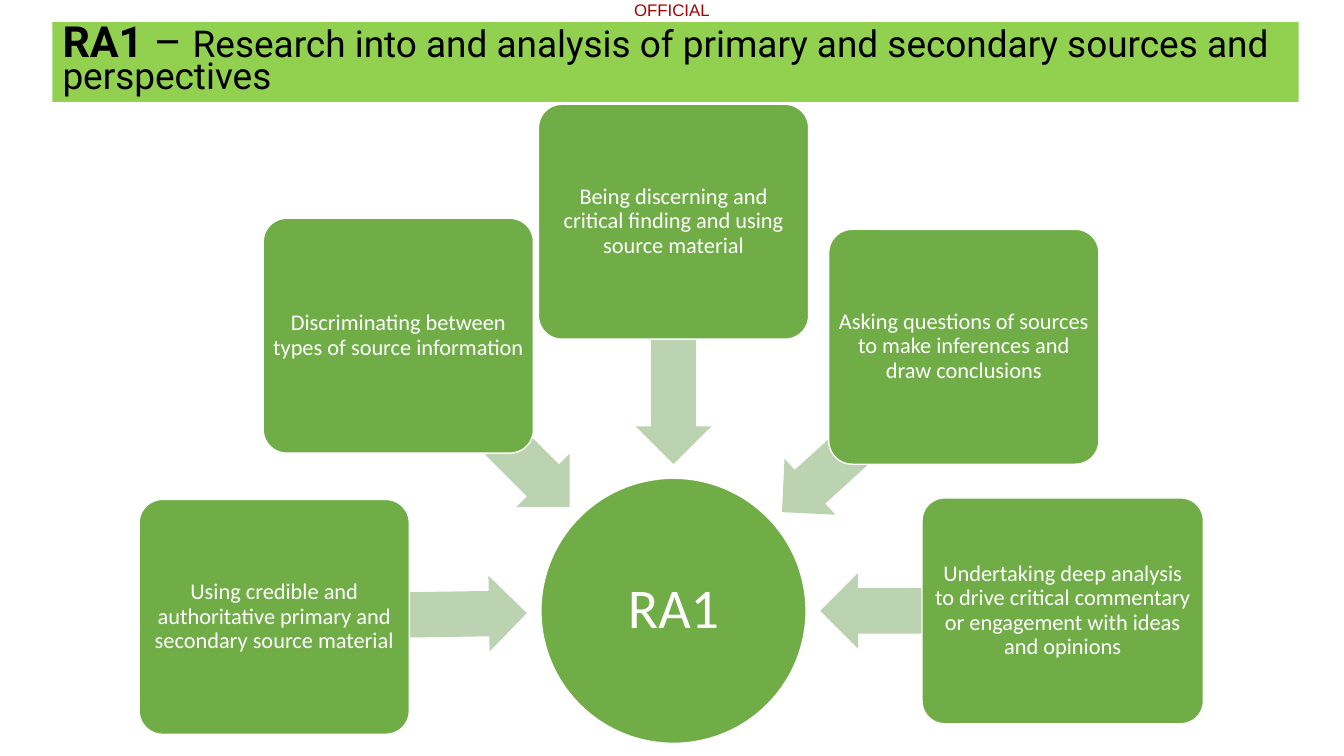
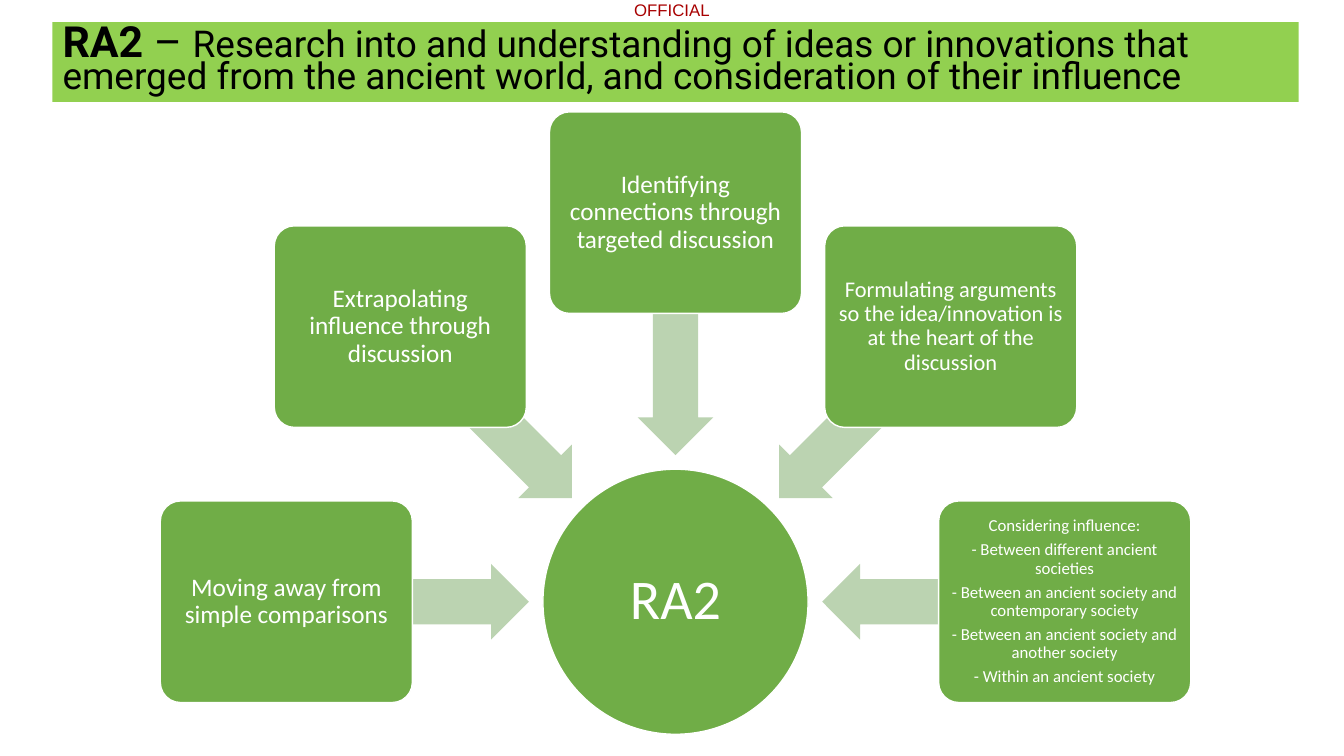
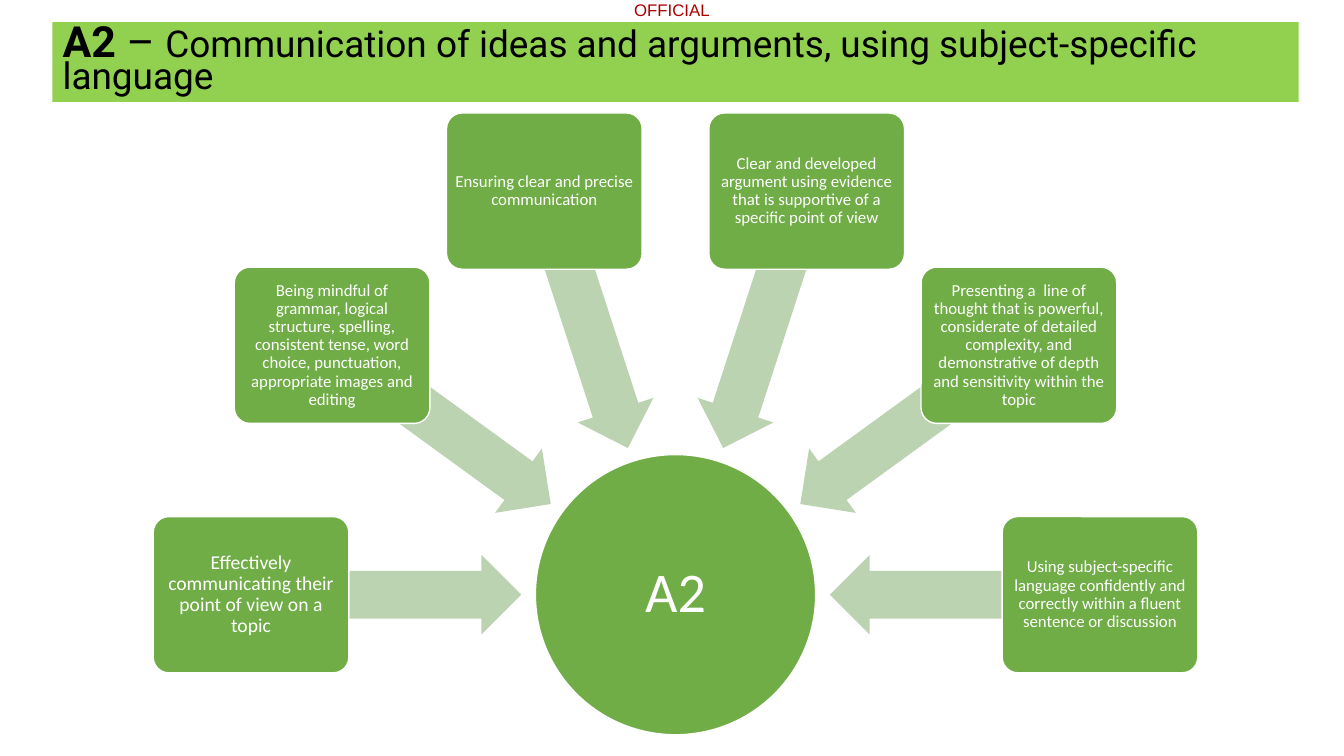
"""Build three hub diagrams that explain assessment criteria."""
from dataclasses import dataclass
from math import atan2, cos, degrees, hypot, radians, sin

from pptx import Presentation
from pptx.dml.color import RGBColor
from pptx.enum.shapes import MSO_SHAPE as Kind
from pptx.enum.text import MSO_ANCHOR as Anchor, MSO_AUTO_SIZE as Fit, PP_ALIGN as Align
from pptx.shapes.autoshape import Shape
from pptx.slide import Slide, SlideLayout
from pptx.text.text import TextFrame, _Paragraph as Para
from pptx.util import Inches, Pt

HUES = {
    "band": "92D050",
    "node": "70AD47",
    "arrow": "BBD3B1",
    "mark": "A80000",
    "dark": "000000",
    "light": "FFFFFF",
}
GAP = 0.14


@dataclass(frozen=True)
class Node:
    text: str
    size: float = 16
    shift: tuple[float, float] = (0, 0)
    dims: tuple[float, float] | None = None


@dataclass(frozen=True)
class Wheel:
    code: str
    title: str
    hub: tuple[float, float]
    width: float
    reach: float
    dims: tuple[float, float]
    thick: float
    nodes: tuple[Node, ...]


WHEELS = (
    Wheel(
        "RA1", "Research into and analysis of primary and secondary sources and perspectives",
        (6.68, 6.06), 2.63, 3.86, (2.68, 2.33), 0.75,
        (
            Node("Using credible and authoritative primary and secondary source material",
                 shift=(-0.1, 0.06)),
            Node("Discriminating between types of source information"),
            Node("Being discerning and critical finding and using source material"),
            Node("Asking questions of sources to make inferences and draw conclusions",
                 shift=(0.15, 0.11)),
            Node("Undertaking deep analysis to drive critical commentary or engagement "
                 "with ideas and opinions", dims=(2.79, 2.24)),
        ),
    ),
    Wheel(
        "RA2", "Research into and understanding of ideas or innovations that emerged "
        "from the ancient world, and consideration of their influence",
        (6.7, 5.97), 2.63, 3.86, (2.5, 2), 0.75,
        (
            Node("Moving away from simple comparisons", 18),
            Node("Extrapolating influence through discussion", 18),
            Node("Identifying connections through targeted discussion", 18),
            Node("Formulating arguments so the idea/innovation is at the heart of the discussion"),
            Node("Considering influence:\n"
                 "- Between different ancient societies\n"
                 "- Between an ancient society and contemporary society\n"
                 "- Between an ancient society and another society\n"
                 "- Within an ancient society", 12),
        ),
    ),
    Wheel(
        "A2", "Communication of ideas and arguments, using subject-specific language",
        (6.7, 5.9), 2.78, 4.21, (1.94, 1.55), 0.79,
        (
            Node("Effectively communicating their point of view on a topic", 14),
            Node("Being mindful of grammar, logical structure, spelling, consistent tense, "
                 "word choice, punctuation, appropriate images and editing", 12),
            Node("Ensuring clear and precise communication", 12),
            Node("Clear and developed argument using evidence that is supportive "
                 "of a specific point of view", 12),
            Node("Presenting a  line of thought that is powerful, considerate of detailed "
                 "complexity, and demonstrative of depth and sensitivity within the topic", 12),
            Node("Using subject-specific language confidently and correctly within "
                 "a fluent sentence or discussion", 12),
        ),
    ),
)


def tint(name: str) -> RGBColor:
    """Return a named colour."""
    return RGBColor.from_string(HUES[name])


def add_run(para: Para, text: str, size: float, face: str, hue: str, bold: bool = False) -> None:
    """Append one formatted run."""
    run = para.add_run()
    run.text = text
    font = run.font
    font.size, font.name, font.bold = Pt(size), face, bold
    font.color.rgb = tint(hue)


def set_pads(frame: TextFrame, pad: float) -> None:
    """Give all four sides of a frame the same inset."""
    frame.margin_left = frame.margin_right = Inches(pad)
    frame.margin_top = frame.margin_bottom = Inches(pad)


def add_form(slide: Slide, kind: Kind, mid: tuple[float, float],
             dims: tuple[float, float], hue: str) -> Shape:
    """Draw a filled shape around its middle."""
    (x, y), (w, h) = mid, dims
    form = slide.shapes.add_shape(
        kind, Inches(x - w / 2), Inches(y - h / 2), Inches(w), Inches(h))
    form.shadow.inherit = False
    form.fill.solid()
    form.fill.fore_color.rgb = tint(hue)
    form.line.fill.background()
    return form


def add_label(form: Shape, text: str, size: float) -> None:
    """Outline a shape in white and centre its text."""
    form.line.color.rgb = tint("light")
    form.line.width = Pt(1)
    frame = form.text_frame
    frame.word_wrap = True
    frame.vertical_anchor = Anchor.MIDDLE
    set_pads(frame, 0.03)
    for i, line in enumerate(text.split("\n")):
        para = frame.add_paragraph() if i else frame.paragraphs[0]
        para.alignment = Align.CENTER
        para.line_spacing = 0.9
        para.space_after = Pt(0.35 * size)
        add_run(para, line, size, "Calibri", "light")


def add_title(slide: Slide, wheel: Wheel) -> None:
    """Turn the title placeholder into the green band."""
    band = slide.shapes.title
    band.left, band.top = Inches(0.52), Inches(0.22)
    band.width, band.height = Inches(12.36), Inches(0.79)
    band.fill.solid()
    band.fill.fore_color.rgb = tint("band")
    frame = band.text_frame
    frame.word_wrap = True
    frame.auto_size = Fit.NONE
    frame.vertical_anchor = Anchor.MIDDLE
    para = frame.paragraphs[0]
    para.alignment = Align.LEFT
    para.line_spacing = 0.7
    add_run(para, f"{wheel.code} ", 30.6, "Roboto", "dark", True)
    add_run(para, "– ", 30.6, "Roboto", "dark")
    add_run(para, wheel.title, 26.4, "Roboto", "dark")


def add_wheel(slide: Slide, wheel: Wheel) -> None:
    """Draw the hub and the nodes on a half circle above it."""
    x, y = wheel.hub
    hub = add_form(slide, Kind.OVAL, wheel.hub, (wheel.width, wheel.width), "node")
    add_label(hub, wheel.code, 40)
    rim = wheel.width / 2 + GAP
    step = 180 / (len(wheel.nodes) - 1)
    for i, node in enumerate(wheel.nodes):
        turn = radians(180 + i * step)
        dx = wheel.reach * cos(turn) + node.shift[0]
        dy = wheel.reach * sin(turn) + node.shift[1]
        dist = hypot(dx, dy)
        part = (dist + rim) / 2 / dist
        arrow = add_form(slide, Kind.LEFT_ARROW, (x + dx * part, y + dy * part),
                         (dist - rim, wheel.thick), "arrow")
        arrow.adjustments[0], arrow.adjustments[1] = 0.6, 0.5
        arrow.rotation = degrees(atan2(dy, dx)) % 360
        box = add_form(slide, Kind.ROUNDED_RECTANGLE, (x + dx, y + dy),
                       node.dims or wheel.dims, "node")
        box.adjustments[0] = 0.1
        add_label(box, node.text, node.size)


def add_mark(slide: Slide, layout: SlideLayout) -> None:
    """Place the marking on the layout, by way of a slide."""
    mark = slide.shapes.add_textbox(Inches(6.29), Inches(0), Inches(0.8), Inches(0.2))
    set_pads(mark.text_frame, 0)
    add_run(mark.text_frame.paragraphs[0], "OFFICIAL", 12, "Arial", "mark")
    layout.element.cSld.spTree.append(mark.element)


def main() -> None:
    """Build and save the deck."""
    deck = Presentation()
    deck.slide_width, deck.slide_height = Inches(13.33), Inches(7.5)
    layout = deck.slide_layouts[5]
    for i, wheel in enumerate(WHEELS):
        slide = deck.slides.add_slide(layout)
        if i == 0:
            add_mark(slide, layout)
        add_title(slide, wheel)
        add_wheel(slide, wheel)
    deck.save("out.pptx")


if __name__ == "__main__":
    main()
